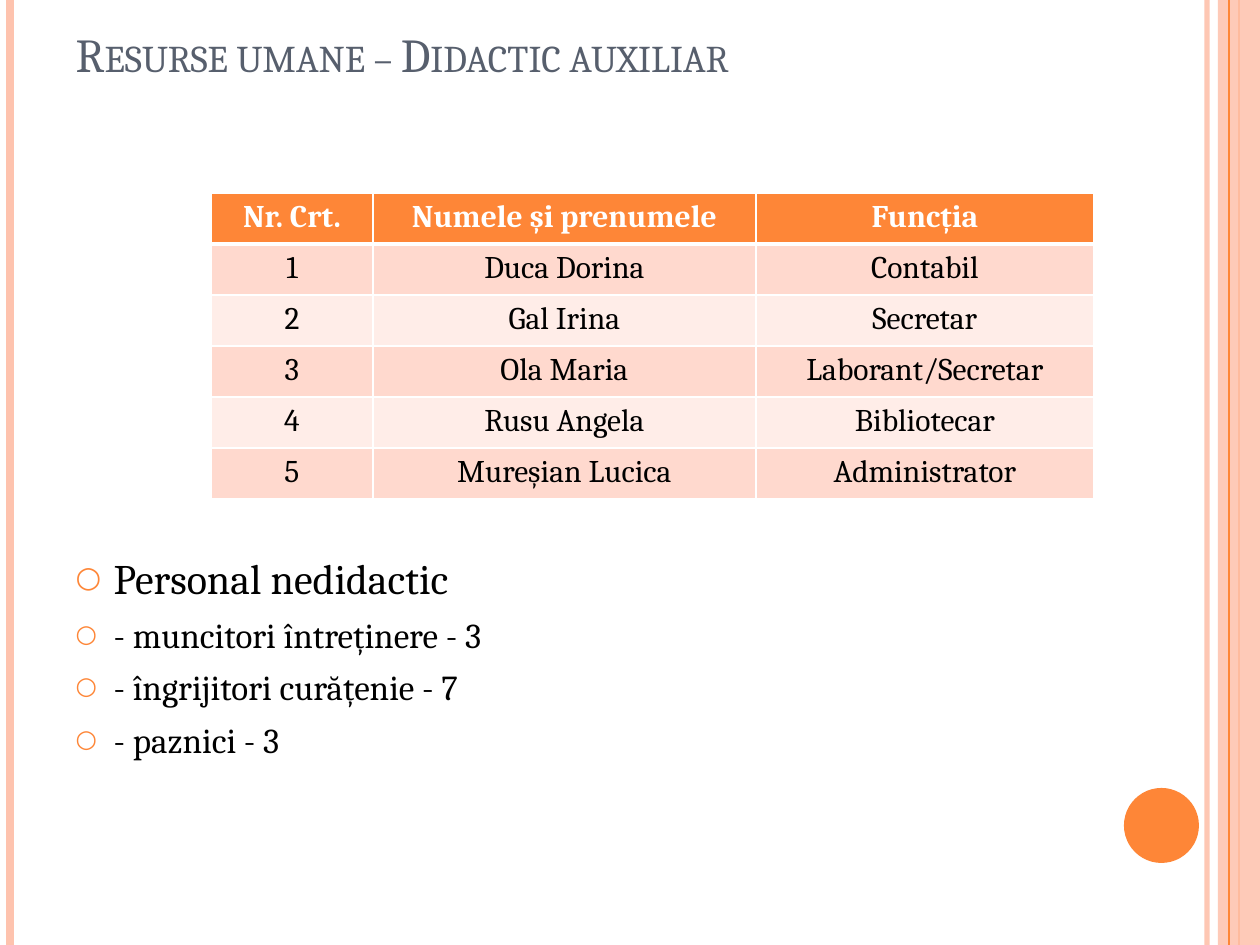
from dataclasses import dataclass

from lxml.etree import SubElement
from pptx import Presentation
from pptx.dml.color import RGBColor
from pptx.enum.shapes import MSO_CONNECTOR, MSO_SHAPE
from pptx.enum.text import MSO_ANCHOR, MSO_AUTO_SIZE, PP_ALIGN
from pptx.oxml import parse_xml
from pptx.oxml.ns import nsdecls, qn
from pptx.util import Emu, Pt

WIDTH, HEIGHT = 1260, 945
SCALE = 914400 / 126

FONT = "Cambria"
ORANGE = RGBColor(0xFE, 0x86, 0x37)
PEACH = RGBColor(0xFE, 0xC3, 0xAE)
SLATE = RGBColor(0x57, 0x5F, 0x6D)
BAND = RGBColor(0xFF, 0xD9, 0xCE)
PALE = RGBColor(0xFF, 0xED, 0xE8)
WHITE = RGBColor(0xFF, 0xFF, 0xFF)
BLACK = RGBColor(0, 0, 0)


@dataclass
class Rule:
    x: int
    color: RGBColor
    weight: float
    alpha: int = 100


@dataclass
class Block:
    kind: MSO_SHAPE
    box: tuple[int, int, int, int]
    color: RGBColor
    alpha: int = 100


DECOR = [
    Rule(1207, PEACH, 3, 93),
    Rule(10, PEACH, 4.5),
    Rule(1239, ORANGE, 1.5),
    Block(MSO_SHAPE.RECTANGLE, (1218, 0, 42, HEIGHT), PEACH, 87),
    Rule(1229, ORANGE, 0.75),
    Block(MSO_SHAPE.OVAL, (1124, 788, 75, 75), ORANGE),
]

COLS = [162, 383, 338]
ROW = 51
STAFF = [
    ("Nr. Crt.", "Numele și prenumele", "Funcția"),
    ("1", "Duca Dorina", "Contabil"),
    ("2", "Gal Irina", "Secretar"),
    ("3", "Ola Maria", "Laborant/Secretar"),
    ("4", "Rusu Angela", "Bibliotecar"),
    ("5", "Mureșian Lucica", "Administrator"),
]

CREW = [
    ("Personal nedidactic", 24),
    ("- muncitori întreținere - 3", 20),
    ("- îngrijitori curățenie - 7", 20),
    ("- paznici - 3", 20),
]


def px(n: int) -> Emu:
    return Emu(round(n * SCALE))


def place(shape, x: int, y: int, w: int, h: int) -> None:
    shape.left, shape.top, shape.width, shape.height = map(px, (x, y, w, h))


def style(par, size: int, color: RGBColor, bold: bool = False) -> None:
    font = par.font
    font.name, font.size, font.bold = FONT, Pt(size), bold
    font.color.rgb = color


def fade(props, alpha: int) -> None:
    """Make the first colour found in props see-through."""
    if alpha < 100:
        color = next(props.iter(qn("a:srgbClr")))
        SubElement(color, qn("a:alpha"), val=str(alpha * 1000))


def draw_rule(shapes, rule: Rule) -> None:
    x = px(rule.x)
    line = shapes.add_connector(MSO_CONNECTOR.STRAIGHT, x, 0, x, px(HEIGHT))
    line.line.color.rgb = rule.color
    line.line.width = Pt(rule.weight)
    props = line._element.spPr
    fade(props, rule.alpha)
    SubElement(props, qn("a:effectLst"))


def draw_block(shapes, block: Block) -> None:
    shape = shapes.add_shape(block.kind, *map(px, block.box))
    shape.shadow.inherit = False
    shape.fill.solid()
    shape.fill.fore_color.rgb = block.color
    shape.line.fill.background()
    fade(shape._element.spPr, block.alpha)


def fill_title(title, text: str) -> None:
    place(title, 63, 38, 1029, 50)
    frame = title.text_frame
    frame.text = text
    frame.auto_size = MSO_AUTO_SIZE.NONE
    frame.vertical_anchor = MSO_ANCHOR.BOTTOM
    par = frame.paragraphs[0]
    par.alignment = PP_ALIGN.LEFT
    style(par, 27, SLATE)
    par.runs[0].font._element.set("cap", "small")


def add_bullet(par) -> None:
    props = par._p.get_or_add_pPr()
    props.set("marL", str(px(38)))
    props.set("indent", str(-px(38)))
    color = SubElement(props, qn("a:buClr"))
    SubElement(color, qn("a:srgbClr"), val=str(ORANGE))
    SubElement(props, qn("a:buSzPct"), val="70000")
    SubElement(props, qn("a:buFont"), typeface=FONT)
    SubElement(props, qn("a:buChar"), char="○")


def fill_list(body, items: list[tuple[str, int]]) -> None:
    place(body, 63, 546, 1119, 370)
    frame = body.text_frame
    frame.text = "\n".join(text for text, _ in items)
    frame.auto_size = MSO_AUTO_SIZE.NONE
    frame.vertical_anchor = MSO_ANCHOR.TOP
    for par, (_, size) in zip(frame.paragraphs, items):
        add_bullet(par)
        par.space_before, par.space_after = Pt(0), Pt(6)
        style(par, size, BLACK)


def add_edges(cell, top: int, foot: int) -> None:
    """Give a cell white borders, with widths in points."""
    props = cell._tc.get_or_add_tcPr()
    edges = {"lnL": 1, "lnR": 1, "lnT": top, "lnB": foot}
    for i, (tag, weight) in enumerate(edges.items()):
        props.insert(i, parse_xml(
            f'<a:{tag} {nsdecls("a")} w="{Pt(weight)}"><a:solidFill>'
            f'<a:srgbClr val="{WHITE}"/></a:solidFill></a:{tag}>'))


def draw_table(shapes, rows: list[tuple[str, ...]]) -> None:
    size = map(px, (211, 193, sum(COLS), ROW * len(rows)))
    table = shapes.add_table(len(rows), len(COLS), *size).table
    for col, width in zip(table.columns, COLS):
        col.width = px(width)
    for r, row in enumerate(rows):
        table.rows[r].height = px(ROW)
        head = r == 0
        for c, text in enumerate(row):
            cell = table.cell(r, c)
            cell.text = text
            cell.fill.solid()
            cell.fill.fore_color.rgb = ORANGE if head else BAND if r % 2 else PALE
            add_edges(cell, 3 if r == 1 else 1, 3 if head else 1)
            par = cell.text_frame.paragraphs[0]
            par.alignment = PP_ALIGN.CENTER
            style(par, 18, WHITE if head else BLACK, head)


def main() -> None:
    deck = Presentation()
    deck.slide_width, deck.slide_height = px(WIDTH), px(HEIGHT)
    slide = deck.slides.add_slide(deck.slide_layouts[1])
    shapes = slide.shapes
    for part in DECOR:
        if isinstance(part, Rule):
            draw_rule(shapes, part)
        else:
            draw_block(shapes, part)
    fill_title(shapes.title, "Resurse umane – Didactic auxiliar")
    fill_list(slide.placeholders[1], CREW)
    draw_table(shapes, STAFF)
    deck.save("out.pptx")


if __name__ == "__main__":
    main()
